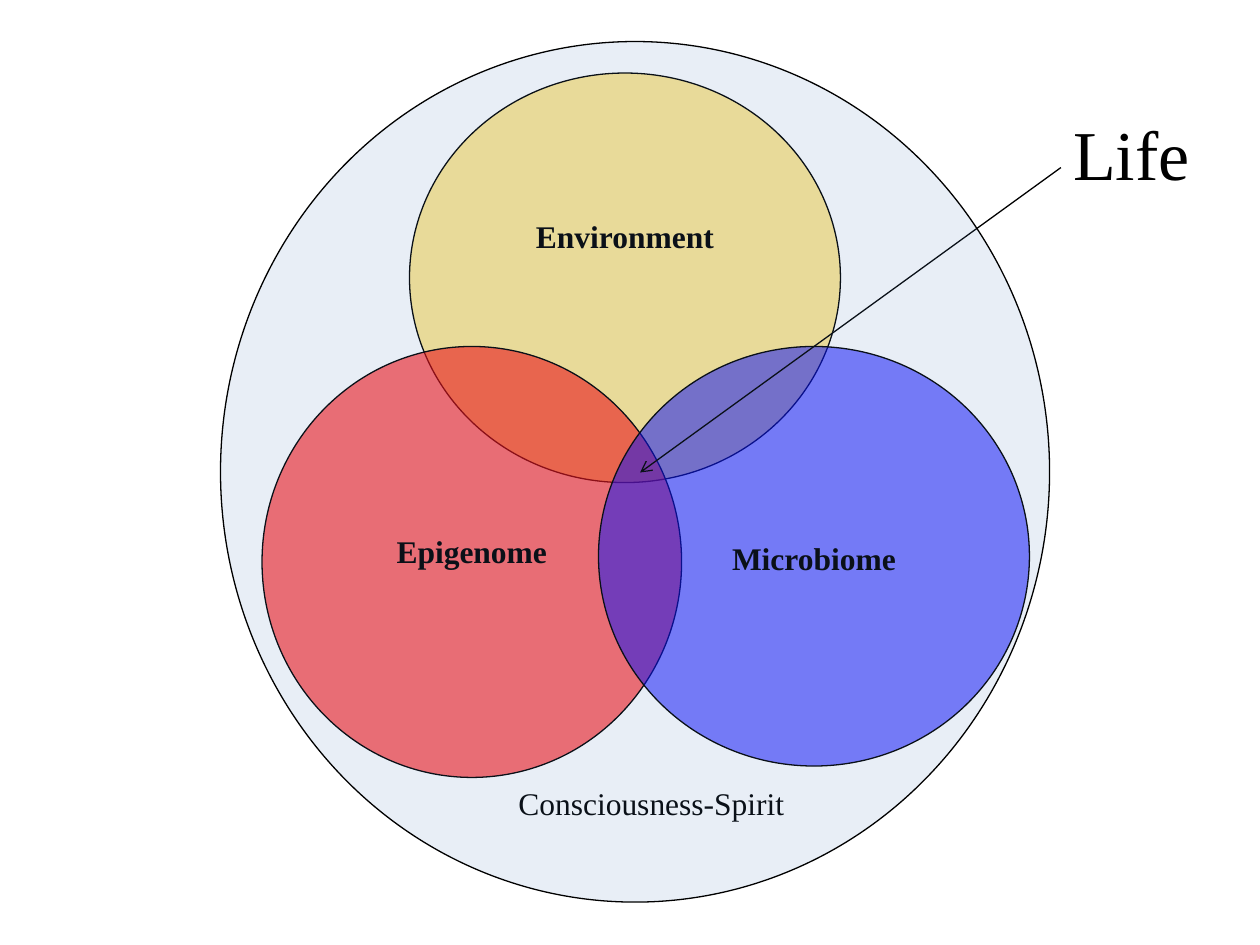
from lxml.etree import SubElement
from pptx import Presentation
from pptx.dml.color import RGBColor
from pptx.enum.shapes import MSO_CONNECTOR, MSO_SHAPE
from pptx.enum.text import MSO_ANCHOR, PP_ALIGN
from pptx.oxml.ns import qn
from pptx.util import Inches, Pt

COLORS = {
    "ink": "000000",
    "environment": "FFCE13",
    "epigenome": "FF0000",
    "microbiome": "0000FF",
    "spirit": "4F81BD",
}


class VennSlide:
    font = "Times New Roman"
    line_width = Pt(0.75)

    def __init__(self, slide):
        self.shapes = slide.shapes

    def color(self, name):
        return RGBColor.from_string(COLORS[name])

    def outline(self, line):
        line.color.rgb = self.color("ink")
        line.width = self.line_width

    def add_label(self, frame, text, size, bold=False, align=PP_ALIGN.CENTER):
        frame.word_wrap = True
        frame.vertical_anchor = MSO_ANCHOR.TOP
        paragraph = frame.paragraphs[0]
        paragraph.alignment = align
        run = paragraph.add_run()
        run.text = text
        run.font.name = self.font
        run.font.size = Pt(size)
        run.font.bold = bold
        run.font.color.rgb = self.color("ink")

    def circle(self, box, fill, opacity, label=None, label_drop=0):
        """Add a translucent circle; label_drop is the inset above its label."""
        circle = self.shapes.add_shape(MSO_SHAPE.OVAL, *map(Inches, box))
        circle.shadow.inherit = False
        circle.fill.solid()
        circle.fill.fore_color.rgb = self.color(fill)
        tint = circle._element.spPr.find(qn("a:solidFill"))[0]
        SubElement(tint, qn("a:alpha"), val=str(opacity * 1000))
        self.outline(circle.line)
        if label:
            circle.text_frame.margin_top = Inches(label_drop)
            self.add_label(circle.text_frame, label, 18, bold=True)

    def text(self, box, text, size, align):
        textbox = self.shapes.add_textbox(*map(Inches, box))
        self.add_label(textbox.text_frame, text, size, align=align)

    def arrow(self, start, end):
        arrow = self.shapes.add_connector(
            MSO_CONNECTOR.STRAIGHT, *map(Inches, start + end))
        self.outline(arrow.line)
        properties = arrow._element.spPr
        SubElement(properties.find(qn("a:ln")), qn("a:tailEnd"), type="arrow")
        SubElement(properties, qn("a:effectLst"))


def main():
    deck = Presentation()
    deck.slide_width, deck.slide_height = Inches(10), Inches(7.5)
    venn = VennSlide(deck.slides.add_slide(deck.slide_layouts[6]))

    # Three overlapping circles
    venn.circle((3.25, 0.58, 3.42, 3.25), "environment", 45, "Environment", 0.67)
    venn.circle((2.08, 2.75, 3.33, 3.42), "epigenome", 58, "Epigenome", 0.97)
    venn.circle((4.75, 2.75, 3.42, 3.33), "microbiome", 52, "Microbiome", 1.04)

    # Life, pointing at the shared centre
    venn.arrow((8.42, 1.33), (5.08, 3.75))
    venn.text((8.42, 0.83, 1.33, 0.77), "Life", 40, PP_ALIGN.LEFT)

    # Surrounding field, a thin tint over everything
    venn.text((3.42, 6.17, 3.5, 0.5), "Consciousness-Spirit", 18, PP_ALIGN.CENTER)
    venn.circle((1.75, 0.33, 6.58, 6.83), "spirit", 13)

    deck.save("out.pptx")


if __name__ == "__main__":
    main()
